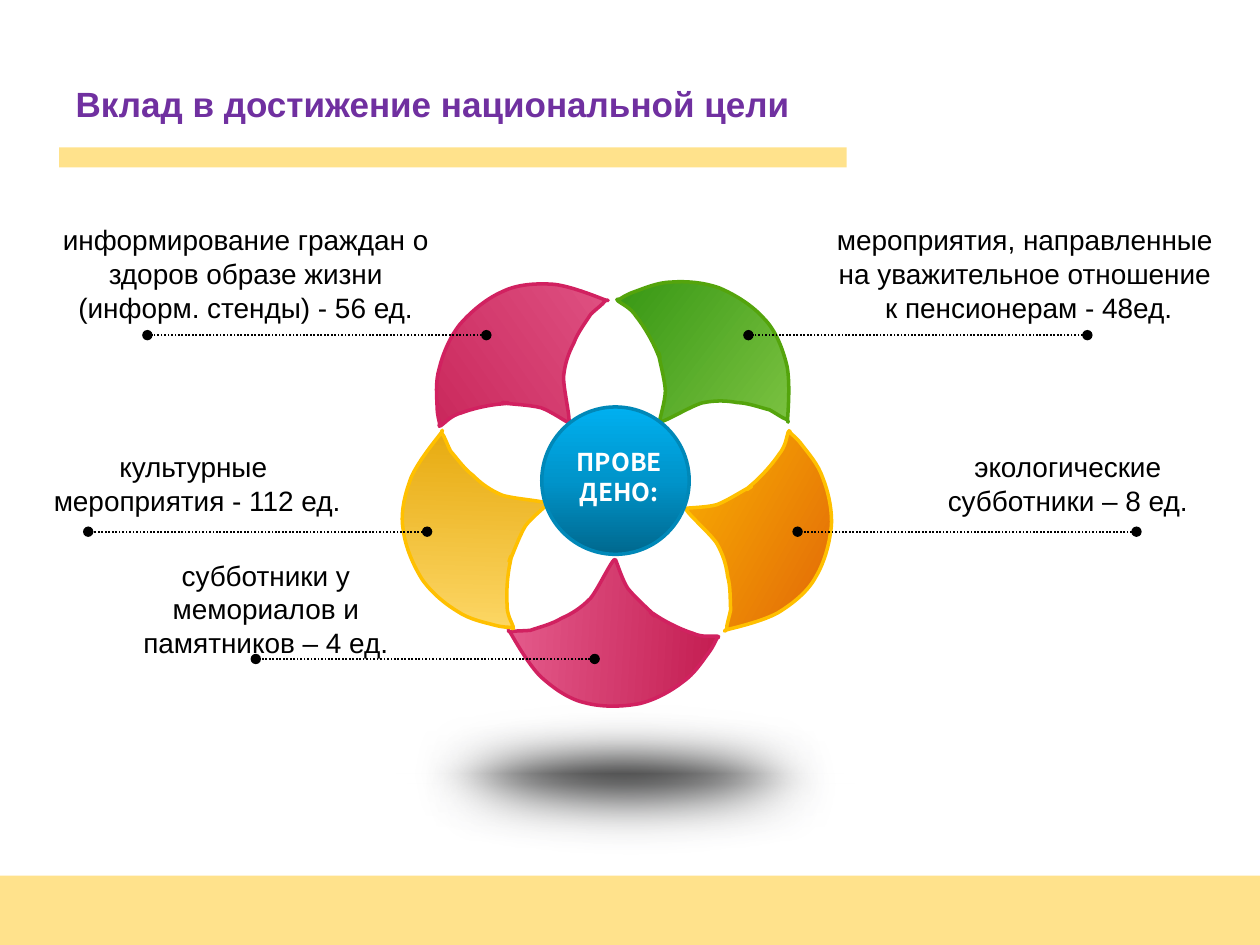
from lxml import etree
from pptx import Presentation
from pptx import util as u
from pptx.dml.color import RGBColor
from pptx.enum import dml, shapes, text
from pptx.oxml import parse_xml
from pptx.oxml.ns import nsdecls, qn

BLACK = RGBColor(0x00, 0x00, 0x00)
WHITE = RGBColor(0xFF, 0xFF, 0xFF)
PURPLE = RGBColor(0x70, 0x30, 0xA0)
GOLD = RGBColor(0xFF, 0xC0, 0x00)
AMBER = RGBColor(0xE4, 0xA3, 0x02)
CREAM = RGBColor(0xFF, 0xDD, 0x71)
ORANGE = RGBColor(0xDD, 0x5A, 0x09)
PINK_LINE = RGBColor(0xD1, 0x21, 0x60)
CRIMSON = RGBColor(0xC3, 0x1B, 0x4F)
ROSE = RGBColor(0xE5, 0x5D, 0x8E)
GREEN_LINE = RGBColor(0x54, 0xA4, 0x0C)
DARK_GREEN = RGBColor(0x23, 0x8B, 0x07)
LIGHT_GREEN = RGBColor(0x92, 0xD0, 0x50)
BLUE_LINE = RGBColor(0x00, 0x88, 0xB8)
DARK_BLUE = RGBColor(0x00, 0x68, 0x8E)
MID_BLUE = RGBColor(0x00, 0x94, 0xCA)
LIGHT_BLUE = RGBColor(0x00, 0xB0, 0xF0)
CHARCOAL = RGBColor(0x12, 0x12, 0x12)
SHADOW_GRAY = RGBColor(0x53, 0x54, 0x55)


def write_text(frame, lines, size=16, font="Arial", color=BLACK, bold=False,
               align=text.PP_ALIGN.CENTER, wrap=True, anchor=text.MSO_ANCHOR.TOP):
    frame.word_wrap = wrap
    frame.vertical_anchor = anchor
    for index, line in enumerate(lines):
        paragraph = frame.paragraphs[0] if index == 0 else frame.add_paragraph()
        paragraph.alignment = align
        run = paragraph.add_run()
        run.text = line
        run.font.size = u.Pt(size)
        run.font.name = font
        run.font.bold = bold
        run.font.color.rgb = color


def fill_gradient(shape, stops, direction):
    stop_xml = "".join(
        f'<a:gs pos="{position * 1000}"><a:srgbClr val="{color}">'
        f'<a:alpha val="{alpha * 1000}"/></a:srgbClr></a:gs>'
        for position, color, alpha in stops)
    gradient = parse_xml(
        f'<a:gradFill {nsdecls("a")} rotWithShape="1">'
        f'<a:gsLst>{stop_xml}</a:gsLst>{direction}</a:gradFill>')
    shape.fill.background()
    blank = shape._element.spPr.find(qn("a:noFill"))
    shape._element.spPr.replace(blank, gradient)


presentation = Presentation()
presentation.slide_width = u.Inches(10)
presentation.slide_height = u.Inches(7.5)
slide = presentation.slides.add_slide(presentation.slide_layouts[5])

for box in ((0, 6.95, 10, 0.55), (0.47, 1.17, 6.25, 0.16)):
    bar = slide.shapes.add_shape(shapes.MSO_SHAPE.RECTANGLE, *map(u.Inches, box))
    bar.shadow.inherit = False
    bar.fill.solid()
    bar.fill.fore_color.rgb = GOLD
    bar.line.fill.background()
    color_element = bar._element.spPr.find(qn("a:solidFill"))[0]
    etree.SubElement(color_element, qn("a:alpha")).set("val", "45000")

title = slide.shapes.title
title.left, title.top, title.width, title.height = map(u.Inches, (0.5, 0.47, 6.77, 0.7))
write_text(title.text_frame, ["Вклад в достижение национальной цели"], size=20,
           color=PURPLE, bold=True, align=text.PP_ALIGN.LEFT,
           anchor=text.MSO_ANCHOR.MIDDLE)
bar._element.addnext(title._element)

floor_shadow = slide.shapes.add_shape(
    shapes.MSO_SHAPE.OVAL, *map(u.Inches, (2.34, 5.47, 5.16, 1.34)))
floor_shadow.line.fill.background()
fill_gradient(floor_shadow, [(0, CHARCOAL, 100), (100, WHITE, 0)],
              '<a:path path="shape"><a:fillToRect l="50000" t="50000" '
              'r="50000" b="50000"/></a:path>')
floor_shadow._element.spPr.append(parse_xml(
    f'<a:effectLst {nsdecls("a")}>'
    f'<a:outerShdw dist="{u.Pt(8.5)}" dir="{45 * 60000}">'
    f'<a:srgbClr val="{SHADOW_GRAY}"/></a:outerShdw>'
    f'<a:softEdge rad="{u.Pt(35)}"/></a:effectLst>'))

PETAL_WIDTH, PETAL_HEIGHT = 1.7, 1.2
PETAL_START = (0.02, 0.58)
PETAL_CURVES = [
    ((0.01, 0.57), (-0.04, 0.43), (-0.09, 0.36)),
    ((-0.15, 0.29), (-0.28, 0.19), (-0.31, 0.16)),
    ((-0.35, 0.12), (-0.22, 0.22), (-0.32, 0.16)),
    ((-0.42, 0.1), (-0.55, 0.05), (-0.63, 0.03)),
    ((-0.71, 0), (-0.78, 0.02), (-0.82, 0.02)),
    ((-0.85, 0.01), (-0.83, 0.02), (-0.82, 0)),
    ((-0.81, -0.02), (-0.8, -0.06), (-0.76, -0.12)),
    ((-0.72, -0.18), (-0.66, -0.29), (-0.57, -0.36)),
    ((-0.49, -0.43), (-0.37, -0.51), (-0.24, -0.55)),
    ((-0.12, -0.58), (0.04, -0.6), (0.19, -0.57)),
    ((0.32, -0.55), (0.45, -0.47), (0.56, -0.38)),
    ((0.66, -0.29), (0.77, -0.12), (0.81, -0.06)),
    ((0.85, 0), (0.84, -0.05), (0.81, -0.04)),
    ((0.79, -0.03), (0.73, -0.03), (0.66, -0.02)),
    ((0.59, 0.01), (0.49, 0.04), (0.42, 0.09)),
    ((0.34, 0.13), (0.27, 0.18), (0.2, 0.26)),
    ((0.14, 0.34), (0.04, 0.6), (0.02, 0.58)),
]
petals = [
    (4.16, 2.89, 324.9, CRIMSON, ROSE, 0, PINK_LINE),
    (4.87, 5.02, 183.3, CRIMSON, ROSE, 0, PINK_LINE),
    (3.8, 4.2, 251.9, AMBER, CREAM, 200, GOLD),
    (5.57, 2.87, 37.2, DARK_GREEN, LIGHT_GREEN, 0, GREEN_LINE),
    (6, 4.21, 109.5, ORANGE, GOLD, 100, GOLD),
]
for center_x, center_y, rotation, dark, light, angle, line_color in petals:
    left, top = center_x - PETAL_WIDTH / 2, center_y - PETAL_HEIGHT / 2
    builder = slide.shapes.build_freeform(*map(u.Inches, PETAL_START))
    builder.add_line_segments([tuple(map(u.Inches, curve[-1])) for curve in PETAL_CURVES])
    petal = builder.convert_to_shape()
    petal.left, petal.top = u.Inches(left), u.Inches(top)
    petal.width, petal.height = u.Inches(PETAL_WIDTH), u.Inches(PETAL_HEIGHT)
    outline = next(petal._element.iter(qn("a:path")))
    outline.set("w", str(u.Inches(PETAL_WIDTH)))
    outline.set("h", str(u.Inches(PETAL_HEIGHT)))
    segments = [("a:moveTo", [PETAL_START])] + [("a:cubicBezTo", c) for c in PETAL_CURVES]
    for old_segment, (tag, points) in zip(list(outline), segments):
        segment = etree.Element(qn(tag))
        for x, y in points:
            point = etree.SubElement(segment, qn("a:pt"))
            point.set("x", str(u.Inches(x + PETAL_WIDTH / 2)))
            point.set("y", str(u.Inches(y + PETAL_HEIGHT / 2)))
        outline.replace(old_segment, segment)
    petal.rotation = rotation
    petal.shadow.inherit = False
    petal.line.color.rgb = line_color
    petal.line.width = u.Pt(2)
    fill_gradient(petal, [(0, dark, 100), (100, light, 100)],
                  f'<a:lin ang="{angle * 60000}" scaled="0"/>')

hub = slide.shapes.add_shape(
    shapes.MSO_SHAPE.OVAL, *map(u.Inches, (4.3, 3.23, 1.17, 1.17)))
hub.shadow.inherit = False
hub.line.color.rgb = BLUE_LINE
hub.line.width = u.Pt(2)
fill_gradient(hub, [(0, DARK_BLUE, 100), (50, MID_BLUE, 100), (100, LIGHT_BLUE, 100)],
              '<a:lin ang="16200000" scaled="0"/>')

LEADER_LENGTH = 2.69
for right, y in ((4.72, 5.23), (3.39, 4.22), (9.02, 4.22), (8.63, 2.66), (3.86, 2.66)):
    leader = slide.shapes.add_connector(
        shapes.MSO_CONNECTOR.STRAIGHT, u.Inches(right), u.Inches(y),
        u.Inches(right - LEADER_LENGTH), u.Inches(y))
    leader.line.color.rgb = BLACK
    leader.line.width = u.Pt(1)
    leader.line.dash_style = dml.MSO_LINE.ROUND_DOT
    for tag in ("a:headEnd", "a:tailEnd"):
        etree.SubElement(leader.line._ln, qn(tag)).set("type", "oval")
    etree.SubElement(leader._element.spPr, qn("a:effectLst"))

labels = [
    ((4.37, 3.5, 1.09, 0.57), ["ПРОВЕ", "ДЕНО:"],
     {"size": 14, "font": "Noto Sans CJK SC", "color": WHITE, "bold": True}),
    ((6.33, 1.72, 3.67, 0.91),
     ["мероприятия, направленные ", "на уважительное отношение ", "к пенсионерам - 48ед."], {}),
    ((7.34, 3.52, 2.27, 0.64), ["экологические субботники – 8 ед."], {}),
    ((0.94, 4.38, 2.34, 0.91), ["субботники у мемориалов и памятников – 4 ед."], {}),
    ((0.31, 3.52, 2.51, 0.64), ["культурные ", "мероприятия - 112 ед."], {"wrap": False}),
    ((0.31, 1.72, 3.28, 0.91),
     ["информирование граждан о здоров образе жизни (информ. стенды) - 56 ед."], {}),
]
for box, lines, style in labels:
    label = slide.shapes.add_textbox(*map(u.Inches, box))
    write_text(label.text_frame, lines, **style)
    label.text_frame.auto_size = text.MSO_AUTO_SIZE.SHAPE_TO_FIT_TEXT

presentation.save("out.pptx")
